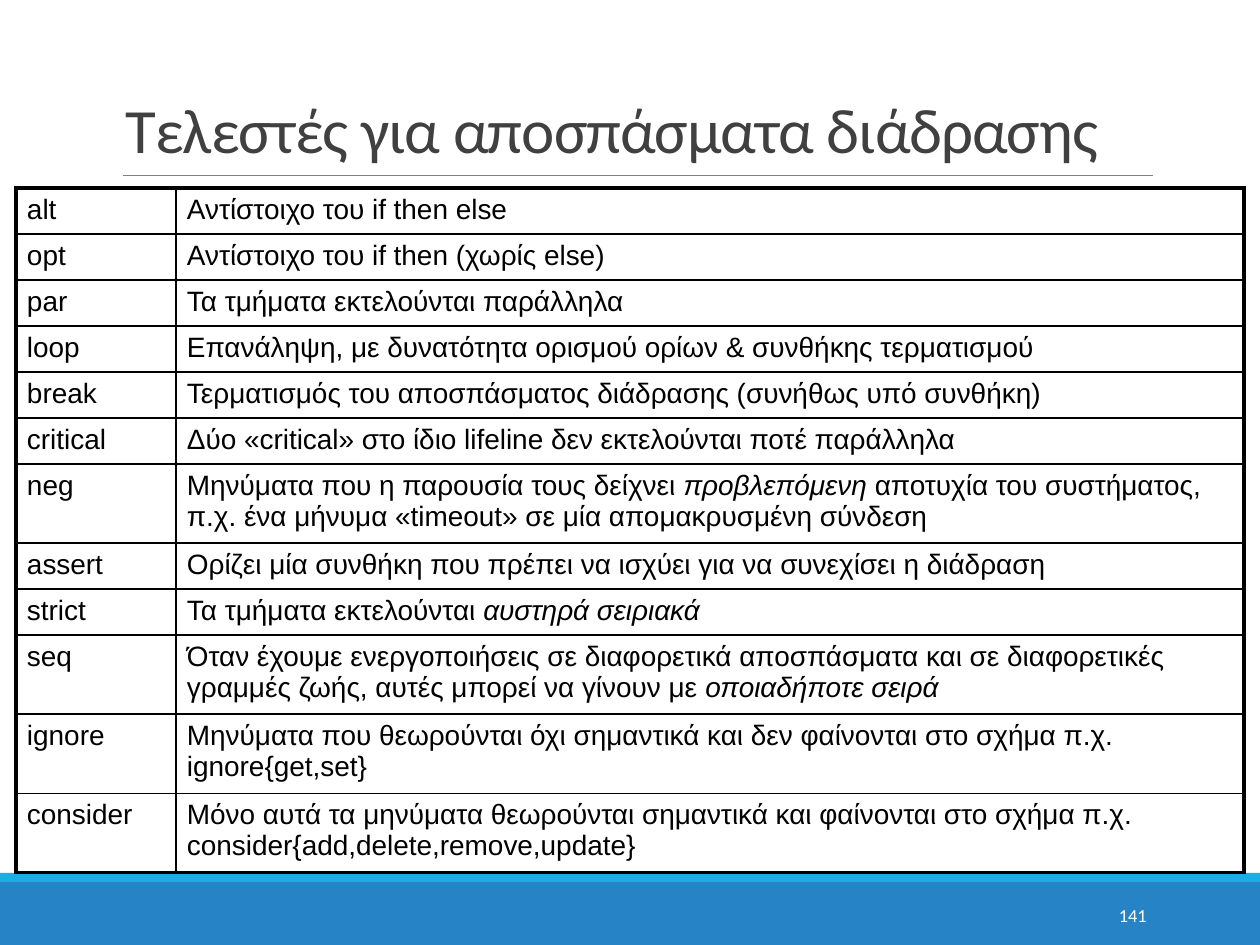
from dataclasses import dataclass

from lxml.etree import SubElement
from pptx import Presentation
from pptx.dml.color import RGBColor as RGB
from pptx.enum.shapes import MSO_CONNECTOR as Connector
from pptx.enum.shapes import MSO_SHAPE as Shape
from pptx.enum.text import MSO_ANCHOR as Anchor
from pptx.enum.text import PP_ALIGN as Align
from pptx.oxml.ns import qn
from pptx.util import Emu, Pt

EMU_PER_PX = 914400 // 126
SLIDE_W, SLIDE_H = 1260, 945


@dataclass(frozen=True)
class Theme:
    footer: str = "2683C6"
    accent: str = "1CADE4"
    rule: str = "808080"
    title: str = "404040"
    ink: str = "000000"
    paper: str = "FFFFFF"
    heading_font: str = "Calibri"
    table_font: str = "Arial"
    title_size: float = 36
    table_size: float = 16
    number_size: float = 10.5
    rule_width: float = 0.5
    inner_border: float = 1
    outer_border: float = 2.25


THEME = Theme()

# Operator, then its description; runs between asterisks are italic
OPERATORS = [
    ("alt", "Αντίστοιχο του if then else"),
    ("opt", "Αντίστοιχο του if then (χωρίς else)"),
    ("par", "Τα τμήματα εκτελούνται παράλληλα"),
    ("loop", "Επανάληψη, με δυνατότητα ορισμού ορίων & συνθήκης τερματισμού"),
    ("break", "Τερματισμός του αποσπάσματος διάδρασης (συνήθως υπό συνθήκη)"),
    ("critical", "Δύο «critical» στο ίδιο lifeline δεν εκτελούνται ποτέ παράλληλα"),
    ("neg", "Μηνύματα που η παρουσία τους δείχνει *προβλεπόμενη *αποτυχία του "
            "συστήματος, π.χ. ένα μήνυμα «timeout» σε μία απομακρυσμένη σύνδεση"),
    ("assert", "Ορίζει μία συνθήκη που πρέπει να ισχύει για να συνεχίσει η διάδραση"),
    ("strict", "Τα τμήματα εκτελούνται *αυστηρά σειριακά*"),
    ("seq", "Όταν έχουμε ενεργοποιήσεις σε διαφορετικά αποσπάσματα και σε διαφορετικές "
            "γραμμές ζωής, αυτές μπορεί να γίνουν με *οποιαδήποτε σειρά*"),
    ("ignore", "Μηνύματα που θεωρούνται όχι σημαντικά και δεν φαίνονται στο σχήμα π.χ. "
               "ignore{get,set}"),
    ("consider", "Μόνο αυτά τα μηνύματα θεωρούνται σημαντικά και φαίνονται στο σχήμα π.χ. "
                 "consider{add,delete,remove,update}"),
]
TWO_LINE_OPERATORS = {"neg", "seq", "ignore", "consider"}
ROW_H, TWO_LINE_ROW_H = 46, 67
COLUMN_WIDTHS = (160, 1068)


def px(length):
    return Emu(length * EMU_PER_PX)


def add_run(paragraph, text, font, size, color, italic=False):
    run = paragraph.add_run()
    run.text = text
    run.font.name = font
    run.font.size = Pt(size)
    run.font.color.rgb = RGB.from_string(color)
    if italic:
        run.font.italic = True
    return run


def add_band(slide, top, height, color):
    band = slide.shapes.add_shape(Shape.RECTANGLE, 0, px(top), px(SLIDE_W), px(height))
    band.shadow.inherit = False
    band.fill.solid()
    band.fill.fore_color.rgb = RGB.from_string(color)
    band.line.fill.background()


def add_rule(slide, left, right, y):
    rule = slide.shapes.add_connector(Connector.STRAIGHT, px(left), px(y), px(right), px(y))
    rule.line.color.rgb = RGB.from_string(THEME.rule)
    rule.line.width = Pt(THEME.rule_width)
    SubElement(rule.element.spPr, qn("a:effectLst"))


def add_text(slide, box, text, size, color, anchor, align=Align.LEFT):
    frame = slide.shapes.add_textbox(*map(px, box)).text_frame
    frame.word_wrap = True
    frame.vertical_anchor = anchor
    paragraph = frame.paragraphs[0]
    paragraph.alignment = align
    return paragraph, add_run(paragraph, text, THEME.heading_font, size, color)


def add_title(slide, text):
    paragraph, run = add_text(slide, (113, 14, 1040, 159), text,
                              THEME.title_size, THEME.title, Anchor.BOTTOM)
    paragraph.line_spacing = 0.85
    run.font._element.set("spc", "-50")  # letter spacing in 1/100 pt


def set_borders(cell, outer_sides):
    properties = cell._tc.get_or_add_tcPr()
    for index, side in enumerate("LRTB"):
        width = THEME.outer_border if side in outer_sides else THEME.inner_border
        border = SubElement(properties, qn(f"a:ln{side}"), w=str(Pt(width)))
        fill = SubElement(border, qn("a:solidFill"))
        SubElement(fill, qn("a:srgbClr"), val=THEME.ink)


def fill_cell(cell, text, outer_sides):
    cell.margin_left = cell.margin_right = px(11)
    cell.margin_top = cell.margin_bottom = px(6)
    cell.vertical_anchor = Anchor.TOP
    set_borders(cell, outer_sides)
    cell.fill.background()
    paragraph = cell.text_frame.paragraphs[0]
    for index, part in enumerate(text.split("*")):
        if part:
            add_run(paragraph, part, THEME.table_font, THEME.table_size,
                    THEME.ink, italic=index % 2 == 1)


def add_operator_table(slide, left, top):
    heights = [TWO_LINE_ROW_H if name in TWO_LINE_OPERATORS else ROW_H
               for name, _ in OPERATORS]
    table = slide.shapes.add_table(len(OPERATORS), len(COLUMN_WIDTHS), px(left), px(top),
                                   px(sum(COLUMN_WIDTHS)), px(sum(heights))).table
    table.first_row = table.horz_banding = False
    for column, width in zip(table.columns, COLUMN_WIDTHS):
        column.width = px(width)
    last = len(OPERATORS) - 1
    for r, (operator, height) in enumerate(zip(OPERATORS, heights)):
        table.rows[r].height = px(height)
        row_sides = "T" * (r == 0) + "B" * (r == last)
        for c, (text, side) in enumerate(zip(operator, "LR")):
            fill_cell(table.cell(r, c), text, row_sides + side)


def main():
    deck = Presentation()
    deck.slide_width, deck.slide_height = px(SLIDE_W), px(SLIDE_H)
    slide = deck.slides.add_slide(deck.slide_layouts[6])

    # Footer bands and title rule
    add_band(slide, 882, 63, THEME.footer)
    add_band(slide, 873, 9, THEME.accent)
    add_rule(slide, 123, 1153, 175)

    # Title and operators
    add_title(slide, "Τελεστές για αποσπάσματα διάδρασης")
    add_operator_table(slide, 16, 188)

    # Slide number
    add_text(slide, (1023, 890, 136, 50), "141", THEME.number_size,
             THEME.paper, Anchor.MIDDLE, Align.RIGHT)

    deck.save("out.pptx")


if __name__ == "__main__":
    main()
